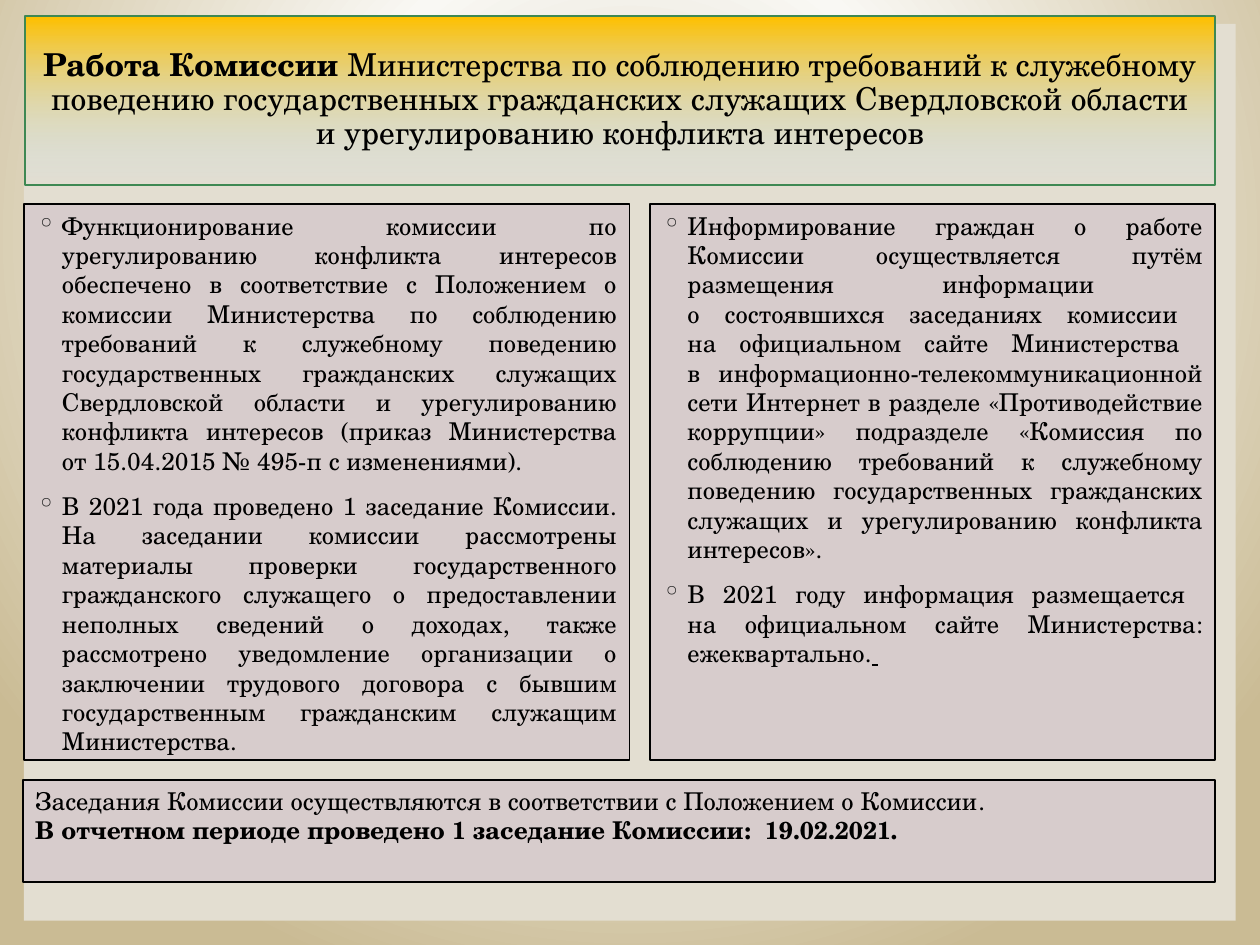
from dataclasses import dataclass

from lxml.etree import SubElement
from pptx import Presentation
from pptx.dml.color import RGBColor
from pptx.enum.shapes import MSO_SHAPE
from pptx.enum.text import MSO_ANCHOR, PP_ALIGN
from pptx.oxml import parse_xml
from pptx.oxml.ns import nsdecls, qn
from pptx.util import Cm, Pt


@dataclass(frozen=True)
class Theme:
    font: str = "TeX Gyre Schola"
    head: int = 18
    body: int = 14
    ink: str = "000000"
    mark: str = "262626"
    page: str = "E3DED1"
    tint: str = "7030A0"
    edge: str = "3E8853"
    back: tuple = ((0, "DED7C4", 100), (39, "F9F8F4", 100), (100, "CABB94", 100))
    glow: tuple = ((0, "FFC000", 100), (100, "BAE1FF", 0), (100, "DDEFFF", 100))


def grade(stops, way):
    """Gradient fill XML from (position, colour, opacity) stops, in percent."""
    marks = "".join(
        f'<a:gs pos="{pos * 1000}"><a:srgbClr val="{hue}">'
        f'<a:alpha val="{alpha * 1000}"/></a:srgbClr></a:gs>'
        for pos, hue, alpha in stops)
    return (f'<a:gradFill {nsdecls("a")} rotWithShape="1">'
            f'<a:gsLst>{marks}</a:gsLst>{way}</a:gradFill>')


def write(para, text, size, font, color, bold=False, under=False):
    """Add text to a paragraph; each newline becomes a line break."""
    for i, line in enumerate(text.split("\n")):
        if i:
            para.add_line_break()
        run = para.add_run()
        run.text = line
        run.font.size = Pt(size)
        run.font.name = font
        run.font.bold = bold
        run.font.underline = under
        run.font.color.rgb = RGBColor.from_string(color)


class Deck:
    def __init__(self, theme):
        self.theme = theme
        self.file = Presentation()
        self.file.slide_width, self.file.slide_height = Cm(25.4), Cm(19.05)
        self.slide = self.file.slides.add_slide(self.file.slide_layouts[6])

    def back(self):
        way = ('<a:path path="circle"><a:fillToRect l="20000" t="10000" '
               'r="20000" b="60000"/></a:path>')
        tree = parse_xml(f'<p:bg {nsdecls("p", "a")}><p:bgPr>'
                         f'{grade(self.theme.back, way)}<a:effectLst/></p:bgPr></p:bg>')
        self.slide.element.cSld.insert(0, tree)

    def box(self, left, top, width, height, fill, line=None, alpha=100):
        shape = self.slide.shapes.add_shape(
            MSO_SHAPE.RECTANGLE, Cm(left), Cm(top), Cm(width), Cm(height))
        shape.shadow.inherit = False
        shape.fill.solid()
        shape.fill.fore_color.rgb = RGBColor.from_string(fill)
        if alpha < 100:
            hue = shape.element.spPr.find(".//" + qn("a:srgbClr"))
            SubElement(hue, qn("a:alpha"), val=str(alpha * 1000))
        if line:
            shape.line.color.rgb = RGBColor.from_string(line)
            shape.line.width = Pt(1)
        else:
            shape.line.fill.background()
        shape.text_frame.word_wrap = True
        shape.text_frame.vertical_anchor = MSO_ANCHOR.TOP
        return shape

    def title(self, *place, parts):
        look = self.theme
        shape = self.box(*place, look.page, look.edge)
        props = shape.element.spPr
        props.replace(props.find(qn("a:solidFill")),
                      parse_xml(grade(look.glow, '<a:lin ang="5400000" scaled="0"/>')))
        shape.text_frame.vertical_anchor = MSO_ANCHOR.MIDDLE
        para = shape.text_frame.paragraphs[0]
        para.alignment = PP_ALIGN.CENTER
        para.line_spacing = 0.9
        for text, bold in parts:
            write(para, text, look.head, look.font, look.ink, bold=bold)

    def panel(self, *place, paras, bullet=False):
        """Tinted box; each paragraph is a list of (text, format) parts."""
        look = self.theme
        frame = self.box(*place, look.tint, look.ink, alpha=10).text_frame
        for i, parts in enumerate(paras):
            para = frame.add_paragraph() if i else frame.paragraphs[0]
            para.alignment = PP_ALIGN.JUSTIFY
            if bullet:
                para.space_before = Pt(9)
                self.bullet(para)
            for text, style in parts:
                write(para, text, look.body, look.font, look.ink, **style)

    def bullet(self, para):
        props = para._p.get_or_add_pPr()
        props.set("marL", str(Cm(0.51)))
        props.set("indent", str(-Cm(0.51)))
        hue = SubElement(props, qn("a:buClr"))
        SubElement(hue, qn("a:srgbClr"), val=self.theme.mark)
        SubElement(props, qn("a:buChar"), char="◦")


def main():
    theme = Theme()
    deck = Deck(theme)
    deck.back()
    deck.box(0.48, 0.48, 24.43, 18.08, theme.page)
    deck.title(0.5, 0.33, 24, 3.4, parts=[
        ("Работа Комиссии ", True),
        ("Министерства по соблюдению требований к служебному поведению "
         "государственных гражданских служащих Свердловской области "
         "и урегулированию конфликта интересов", False)])

    top, high = 4.12, 11.2
    deck.panel(0.49, top, 12.2, high, bullet=True, paras=[
        [("Функционирование комиссии по урегулированию конфликта интересов "
          "обеспечено в соответствие с Положением о комиссии Министерства "
          "по соблюдению требований к служебному поведению государственных "
          "гражданских служащих Свердловской области и урегулированию конфликта "
          "интересов (приказ Министерства от 15.04.2015 № 495-п с изменениями).", {})],
        [("В 2021 года проведено 1 заседание Комиссии. На заседании комиссии "
          "рассмотрены материалы проверки государственного гражданского служащего "
          "о предоставлении неполных сведений о доходах, также рассмотрено "
          "уведомление организации о заключении трудового договора с бывшим "
          "государственным гражданским служащим Министерства.", {})]])
    deck.panel(13.1, top, 11.4, high, bullet=True, paras=[
        [("Информирование граждан о работе Комиссии осуществляется путём "
          "размещения информации \nо состоявшихся заседаниях комиссии \n"
          "на официальном сайте Министерства \n"
          "в информационно-телекоммуникационной сети Интернет в разделе "
          "«Противодействие коррупции» подразделе «Комиссия по соблюдению "
          "требований к служебному поведению государственных гражданских служащих "
          "и урегулированию конфликта интересов».", {})],
        [("В 2021 году информация размещается \n"
          "на официальном сайте Министерства: ежеквартально.", {}),
         (" ", {"under": True})]])
    deck.panel(0.46, 15.72, 24.04, 2.06, paras=[
        [("Заседания Комиссии осуществляются в соответствии "
          "с Положением о Комиссии.", {})],
        [("В отчетном периоде проведено 1 заседание Комиссии:  19.02.2021.",
          {"bold": True})]])
    deck.file.save("out.pptx")


if __name__ == "__main__":
    main()
